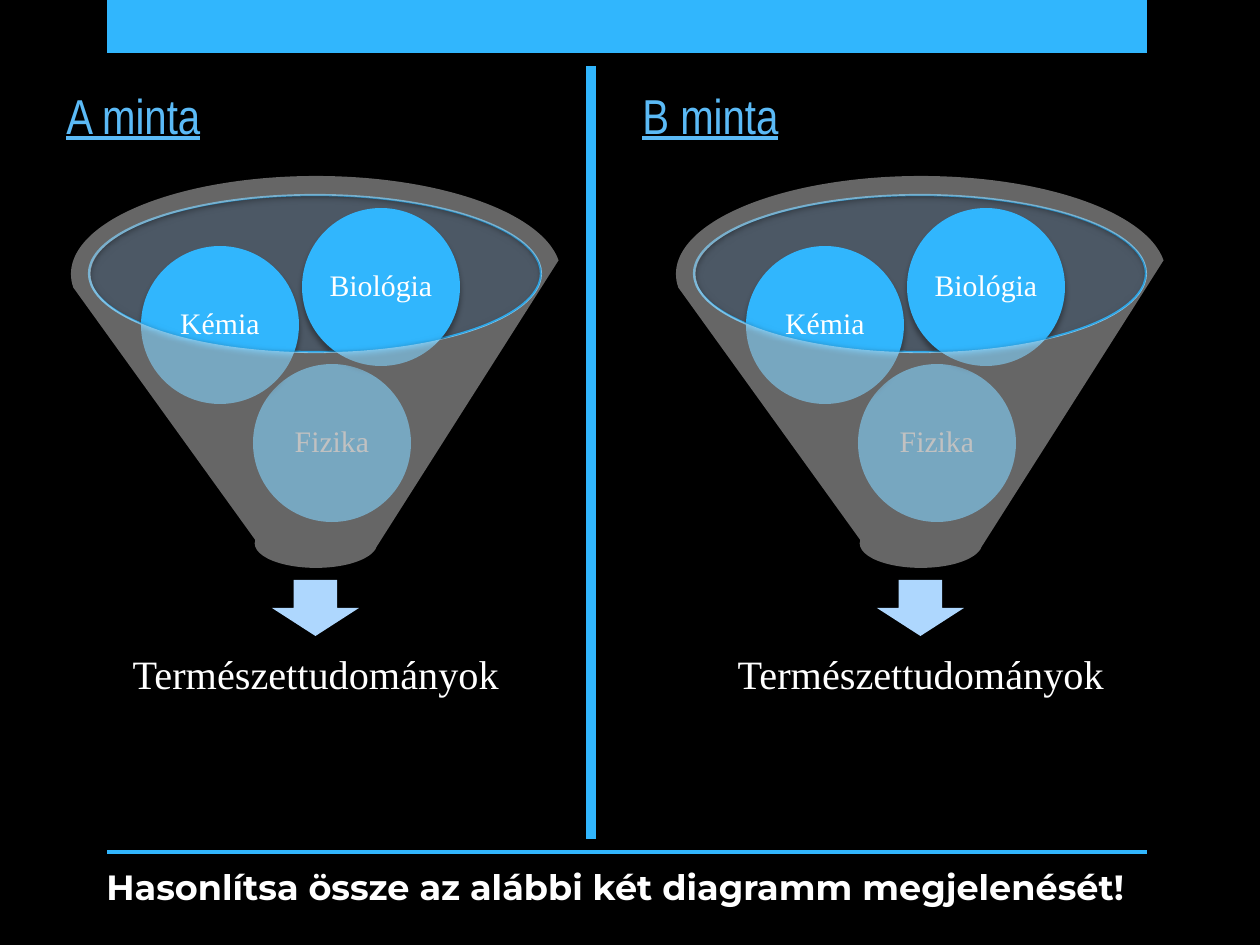
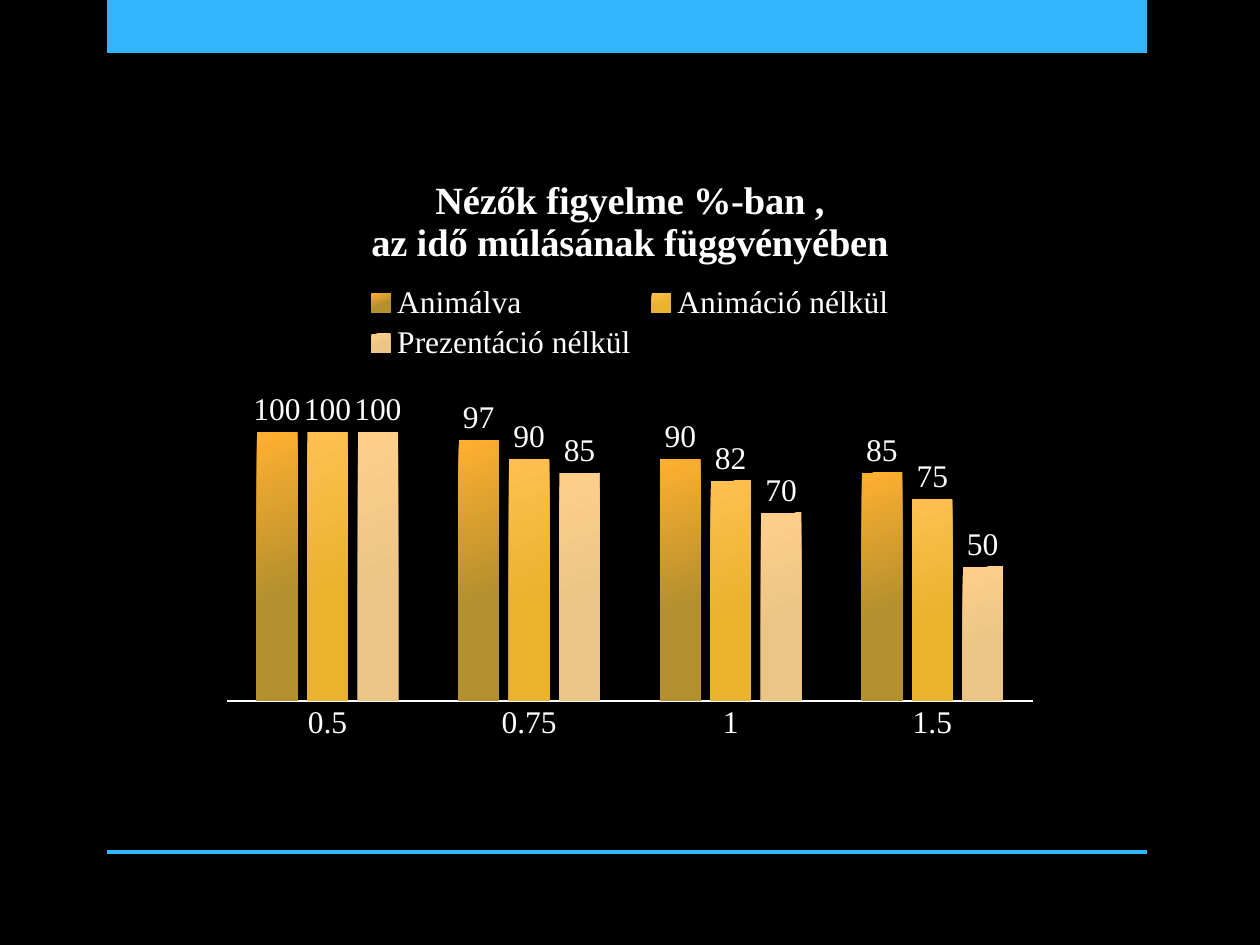
from dataclasses import dataclass

from lxml.etree import SubElement
from pptx import Presentation
from pptx.chart.data import CategoryChartData
from pptx.dml.color import RGBColor
from pptx.enum.chart import XL_CHART_TYPE, XL_LABEL_POSITION, XL_LEGEND_POSITION, XL_TICK_LABEL_POSITION, XL_TICK_MARK
from pptx.enum.shapes import MSO_CONNECTOR, MSO_SHAPE
from pptx.enum.text import MSO_ANCHOR, PP_ALIGN
from pptx.oxml.ns import qn
from pptx.util import Emu, Pt

PX_PER_INCH = 126
SERIF = "Times New Roman"
COLORS = {
    "background": "000000",
    "accent": "31B6FD",
    "text": "FFFFFF",
    "heading": "5BBAF6",
    "mouth": "BEDEFE",
    "arrow": "AED7FE",
    "shadow": "000000",
}


@dataclass(frozen=True)
class Box:
    """A rectangle in px."""

    left: int
    top: int
    width: int
    height: int

    def emu(self, shift: int = 0) -> tuple:
        """Return the rectangle in EMU, moved right by shift px."""
        return px(self.left + shift), px(self.top), px(self.width), px(self.height)


@dataclass(frozen=True)
class TextStyle:
    """The look of a run."""

    size: int
    font: str = SERIF
    color: str = "text"
    bold: bool = False
    underline: bool = False


@dataclass(frozen=True)
class Shadow:
    """An outer shadow in points, percent and degrees."""

    alpha: int
    blur: int
    distance: int
    angle: int


@dataclass(frozen=True)
class Subject:
    """A ball that falls into the funnel."""

    name: str
    left: int
    top: int


@dataclass(frozen=True)
class Sample:
    """One of the two compared diagrams."""

    title: str
    title_box: Box
    shift: int


@dataclass(frozen=True)
class Audience:
    """A chart series with its gradient colours."""

    name: str
    attention: tuple
    top_color: str
    bottom_color: str


BANDS = [Box(107, 0, 1040, 53), Box(107, 850, 1040, 4)]
HEADING = TextStyle(28, "Arial Narrow", "heading", underline=True)
QUESTION = TextStyle(20, "Montserrat", bold=True)
BALL_SIZE = 158
BALL_SHADOW = Shadow(35, 3, 3, 90)
FUNNEL_SHADOW = Shadow(40, 4, 1, 88)
SUBJECTS = [Subject("Fizika", 253, 364), Subject("Kémia", 141, 246), Subject("Biológia", 302, 208)]
SAMPLES = [
    Sample("A minta", Box(54, 79, 171, 72), 0),
    Sample("B minta", Box(630, 79, 175, 72), 605),
]
MINUTES = ["0.5", "0.75", "1", "1.5"]
AUDIENCES = [
    Audience("Animálva", (100, 97, 90, 85), "FFB030", "B5902E"),
    Audience("Animáció nélkül", (100, 90, 82, 75), "FFC050", "EAB22D"),
    Audience("Prezentáció nélkül", (100, 85, 70, 50), "FFCF8A", "EBC585"),
]


def px(length: int) -> Emu:
    """Turn px into EMU."""
    return Emu(round(length * 914400 / PX_PER_INCH))


def rgb(name: str) -> RGBColor:
    """Look up a named colour."""
    return RGBColor.from_string(COLORS[name])


def add_alpha(color_element, percent: int) -> None:
    """Make a colour element partly transparent."""
    SubElement(color_element, qn("a:alpha"), val=str(percent * 1000))


def set_shadow(element, shadow: Shadow) -> None:
    """Give a shape or connector element an outer shadow."""
    effects = element.spPr.find(qn("a:effectLst"))
    if effects is None:
        effects = SubElement(element.spPr, qn("a:effectLst"))
    outer = SubElement(
        effects, qn("a:outerShdw"), blurRad=str(Pt(shadow.blur)), dist=str(Pt(shadow.distance)),
        dir=str(shadow.angle * 60000), algn="ctr", rotWithShape="0",
    )
    add_alpha(SubElement(outer, qn("a:srgbClr"), val=COLORS["shadow"]), shadow.alpha)


def add_filled(shapes, kind, box: Box, color: str, shift: int = 0, alpha: int = 100):
    """Add a preset shape with a plain fill and no outline."""
    shape = shapes.add_shape(kind, *box.emu(shift))
    shape.shadow.inherit = False
    shape.fill.solid()
    shape.fill.fore_color.rgb = rgb(color)
    shape.line.fill.background()
    if alpha < 100:
        add_alpha(shape.element.spPr.find(qn("a:solidFill"))[0], alpha)
    return shape


def add_run(paragraph, text: str, style: TextStyle) -> None:
    """Append a styled run."""
    run = paragraph.add_run()
    run.text = text
    run.font.size = Pt(style.size)
    run.font.name = style.font
    run.font.color.rgb = rgb(style.color)
    run.font.bold = style.bold
    run.font.underline = style.underline


def add_label(shapes, box: Box, text: str, style: TextStyle) -> None:
    """Add a single-line text box."""
    frame = shapes.add_textbox(*box.emu()).text_frame
    frame.word_wrap = False
    add_run(frame.paragraphs[0], text, style)


def write_centered(shape, text: str, style: TextStyle) -> None:
    """Write a centred line into a shape."""
    frame = shape.text_frame
    frame.word_wrap = False
    frame.vertical_anchor = MSO_ANCHOR.MIDDLE
    frame.margin_left = frame.margin_right = frame.margin_top = frame.margin_bottom = px(3)
    paragraph = frame.paragraphs[0]
    paragraph.alignment = PP_ALIGN.CENTER
    paragraph.line_spacing = 0.9
    add_run(paragraph, text, style)


def add_base_slide(deck):
    """Add a blank slide with the dark background and the two bands."""
    slide = deck.slides.add_slide(deck.slide_layouts[6])
    slide.background.fill.solid()
    slide.background.fill.fore_color.rgb = rgb("background")
    for band in BANDS:
        add_filled(slide.shapes, MSO_SHAPE.RECTANGLE, band, "accent")
    return slide


def add_funnel_diagram(slide, shift: int) -> None:
    """Draw the funnel that merges the subjects."""
    shapes = slide.shapes.add_group_shape().shapes
    mouth = add_filled(shapes, MSO_SHAPE.OVAL, Box(89, 195, 452, 157), "mouth", shift, 40)
    mouth.line.color.rgb = rgb("accent")
    mouth.line.width = Pt(1.25)
    add_filled(shapes, MSO_SHAPE.DOWN_ARROW, Box(272, 580, 87, 56), "arrow", shift)
    outcome = shapes.add_textbox(*Box(106, 624, 420, 105).emu(shift))
    write_centered(outcome, "Természettudományok", TextStyle(23))
    for subject in SUBJECTS:
        ball_box = Box(subject.left, subject.top, BALL_SIZE, BALL_SIZE)
        ball = add_filled(shapes, MSO_SHAPE.OVAL, ball_box, "accent", shift)
        set_shadow(ball.element, BALL_SHADOW)
        write_centered(ball, subject.name, TextStyle(17))
    funnel = add_filled(shapes, MSO_SHAPE.FUNNEL, Box(71, 176, 490, 392), "text", shift, 40)
    set_shadow(funnel.element, FUNNEL_SHADOW)


def add_comparison_slide(deck) -> None:
    """Build the slide with the two samples side by side."""
    slide = add_base_slide(deck)
    divider = slide.shapes.add_connector(MSO_CONNECTOR.STRAIGHT, px(591), px(66), px(591), px(839))
    divider.line.color.rgb = rgb("accent")
    divider.line.width = Pt(6)
    set_shadow(divider.element, BALL_SHADOW)
    question = "Hasonlítsa össze az alábbi két diagramm megjelenését!"
    add_label(slide.shapes, Box(94, 859, 1105, 55), question, QUESTION)
    for sample in SAMPLES:
        add_funnel_diagram(slide, sample.shift)
        add_label(slide.shapes, sample.title_box, sample.title, HEADING)


def style_series(series, audience: Audience) -> None:
    """Give a series its gradient and value labels."""
    fill = series.format.fill
    fill.gradient()
    fill.gradient_angle = 290
    first, last = fill.gradient_stops
    first.color.rgb = RGBColor.from_string(audience.top_color)
    first.position = 0
    last.color.rgb = RGBColor.from_string(audience.bottom_color)
    last.position = 0.6
    series.invert_if_negative = False
    labels = series.data_labels
    labels.show_value = True
    labels.position = XL_LABEL_POSITION.OUTSIDE_END


def add_attention_slide(deck) -> None:
    """Build the slide with the attention chart."""
    slide = add_base_slide(deck)
    data = CategoryChartData()
    data.categories = MINUTES
    for audience in AUDIENCES:
        data.add_series(audience.name, audience.attention)
    chart_box = Box(210, 155, 840, 597)
    chart = slide.shapes.add_chart(XL_CHART_TYPE.COLUMN_CLUSTERED, *chart_box.emu(), data).chart
    chart.font.size = Pt(18)
    chart.font.name = SERIF
    chart.font.color.rgb = rgb("text")

    chart.has_title = True
    title = chart.chart_title.text_frame
    title_style = TextStyle(22, bold=True)
    add_run(title.paragraphs[0], "Nézők figyelme %-ban ,", title_style)
    add_run(title.add_paragraph(), "az idő múlásának függvényében", title_style)
    chart.has_legend = True
    chart.legend.position = XL_LEGEND_POSITION.TOP
    chart.legend.include_in_layout = False

    attention_axis = chart.value_axis
    attention_axis.visible = False
    attention_axis.has_major_gridlines = False
    attention_axis.minimum_scale = 0
    attention_axis.maximum_scale = 120
    time_axis = chart.category_axis
    time_axis.major_tick_mark = XL_TICK_MARK.NONE
    time_axis.tick_label_position = XL_TICK_LABEL_POSITION.NEXT_TO_AXIS
    time_axis.format.line.color.rgb = rgb("text")
    time_axis.format.line.width = Pt(1.25)

    plot = chart.plots[0]
    plot.vary_by_categories = False
    plot.gap_width = 150
    plot.overlap = -25
    for series, audience in zip(plot.series, AUDIENCES):
        style_series(series, audience)


def main() -> None:
    """Build and save the deck."""
    deck = Presentation()
    deck.slide_width = px(1260)
    deck.slide_height = px(945)
    add_comparison_slide(deck)
    add_attention_slide(deck)
    deck.save("out.pptx")


if __name__ == "__main__":
    main()
